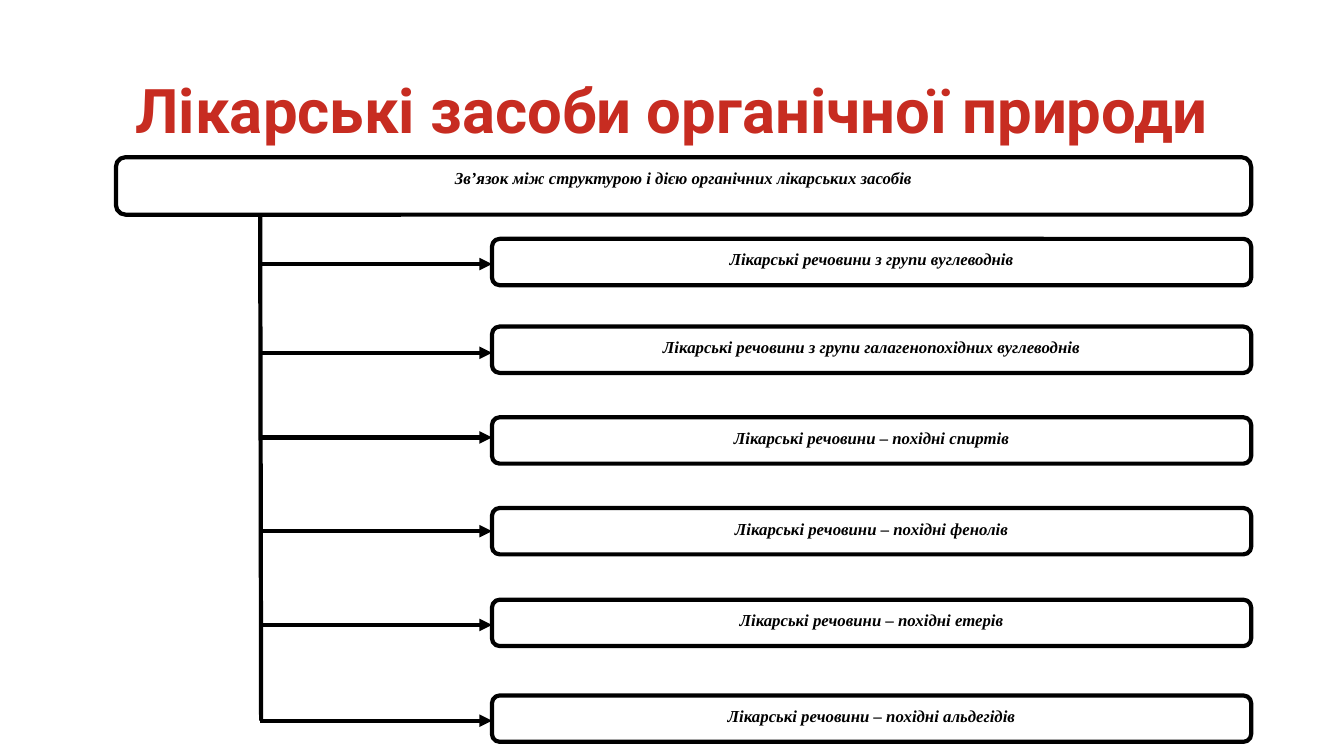
from lxml.etree import SubElement
from pptx import Presentation
from pptx.dml.color import RGBColor
from pptx.enum.shapes import MSO_CONNECTOR, MSO_SHAPE
from pptx.enum.text import MSO_ANCHOR, MSO_AUTO_SIZE, PP_ALIGN
from pptx.oxml.ns import qn
from pptx.util import Inches, Pt

BLACK = "000000"
WHITE = "FFFFFF"
RED = "C72C21"
TRUNK_X = 2.58
BRANCH_X = 4.88
BOX_WIDTH = 7.53
BOX_HEIGHT = 0.46

HEADER = (1.15, 1.56, 11.26, 0.57, "Зв’язок між структурою і дією органічних лікарських засобів")
BRANCHES = [
    (2.37, 2.62, "Лікарські речовини з групи вуглеводнів"),
    (3.24, 3.5, "Лікарські речовини з групи галагенопохідних вуглеводнів"),
    (4.14, 4.34, "Лікарські речовини – похідні спиртів"),
    (5.04, 5.27, "Лікарські речовини – похідні фенолів"),
    (5.95, 6.2, "Лікарські речовини – похідні етерів"),
    (6.9, 7.15, "Лікарські речовини – похідні альдегідів"),
]


def write(shape, text, font="Times New Roman", size=12, color=BLACK, italic=True,
          anchor=MSO_ANCHOR.TOP, spacing=1.15, after=10):
    frame = shape.text_frame
    frame.word_wrap = True
    frame.auto_size = MSO_AUTO_SIZE.NONE
    frame.vertical_anchor = anchor
    para = frame.paragraphs[0]
    para.alignment = PP_ALIGN.CENTER
    para.line_spacing = spacing
    para.space_after = Pt(after)
    span = para.add_run()
    span.text = text
    span.font.name = font
    span.font.size = Pt(size)
    span.font.bold = True
    span.font.italic = italic
    span.font.color.rgb = RGBColor.from_string(color)


deck = Presentation()
deck.slide_width = Inches(13.33)
deck.slide_height = Inches(7.5)
page = deck.slides.add_slide(deck.slide_layouts[5])

title = page.shapes.title
title.left, title.top = Inches(0.92), Inches(0.4)
title.width, title.height = Inches(11.5), Inches(1.45)
write(title, "Лікарські засоби органічної природи", font="Roboto", size=44, color=RED,
      italic=False, anchor=MSO_ANCHOR.MIDDLE, spacing=0.9, after=0)

trunk = (TRUNK_X, 1.75, TRUNK_X + 0.01, BRANCHES[-1][1], False)
arrows = [(TRUNK_X, y, BRANCH_X, y, True) for top, y, text in BRANCHES]
for *ends, has_head in [trunk] + arrows:
    connector = page.shapes.add_connector(MSO_CONNECTOR.STRAIGHT, *map(Inches, ends))
    connector.line.color.rgb = RGBColor.from_string(BLACK)
    connector.line.width = Pt(3)
    if has_head:
        SubElement(connector.line._get_or_add_ln(), qn("a:tailEnd"), type="triangle")
    SubElement(connector._element.spPr, qn("a:effectLst"))

branch_boxes = [(BRANCH_X, top, BOX_WIDTH, BOX_HEIGHT, text) for top, y, text in BRANCHES]
for *bounds, text in branch_boxes + [HEADER]:
    box = page.shapes.add_shape(MSO_SHAPE.ROUNDED_RECTANGLE, *map(Inches, bounds))
    box.shadow.inherit = False
    box.fill.solid()
    box.fill.fore_color.rgb = RGBColor.from_string(WHITE)
    box.line.color.rgb = RGBColor.from_string(BLACK)
    box.line.width = Pt(3)
    write(box, text)

deck.save("out.pptx")
